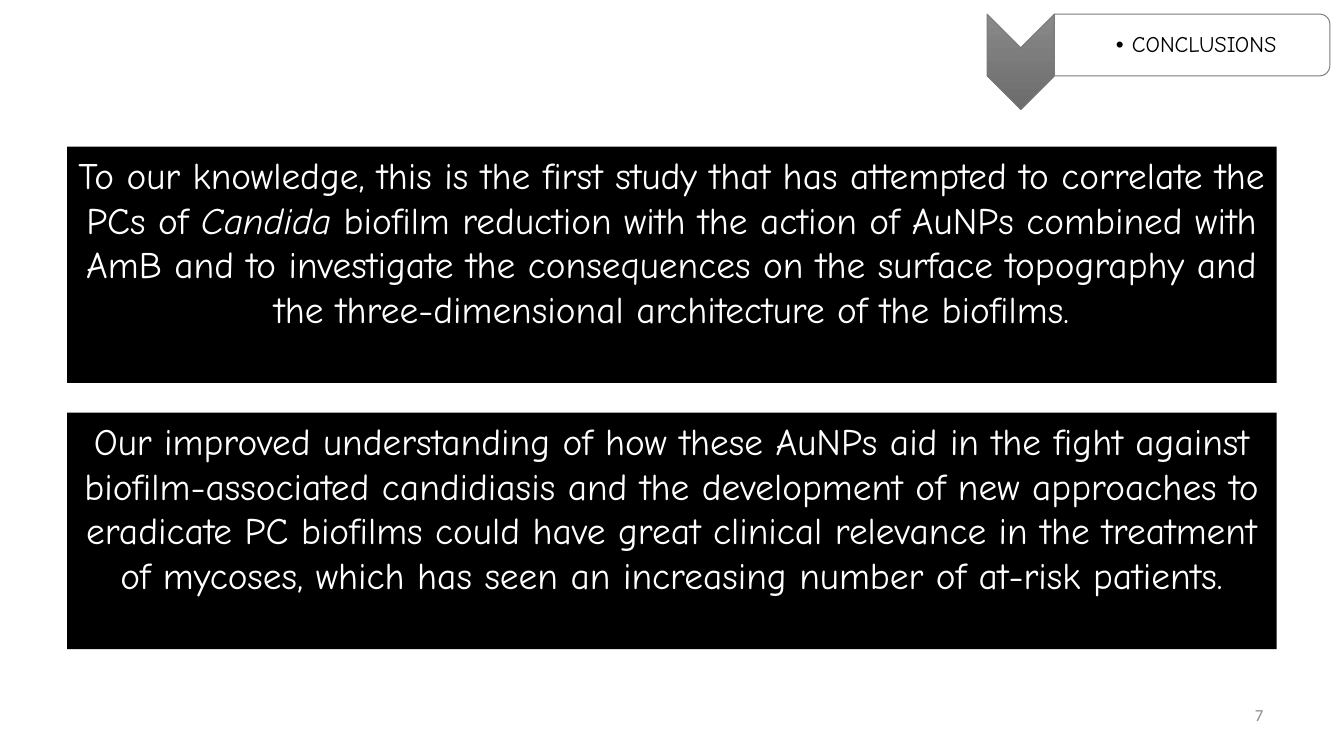
from lxml import etree
from pptx import Presentation
from pptx import util as u
from pptx.dml.color import RGBColor
from pptx.enum import shapes, text
from pptx.oxml.ns import qn


def paint(code):
    return RGBColor.from_string(code)


class Deck:
    font = "Comic Neue"
    edge = "7A7A7A"

    def __init__(self, wide):
        self.prs = Presentation()
        self.prs.slide_width = u.Inches(wide)
        self.prs.slide_height = u.Inches(wide * 9 / 16)
        self.slide = self.prs.slides.add_slide(self.prs.slide_layouts[3])

    def place(self, item, box):
        item.left, item.top, item.width, item.height = map(u.Inches, box)

    def frame(self, item, inset, anchor):
        body = item.text_frame
        body.word_wrap = True
        body.auto_size = text.MSO_AUTO_SIZE.NONE
        body.vertical_anchor = anchor
        pad = [u.Inches(n) for n in inset]
        body.margin_left, body.margin_top, body.margin_right, body.margin_bottom = pad
        return body.paragraphs[0]

    def style(self, run, size, color, font=None):
        run.font.name = font or self.font
        run.font.size = u.Pt(size)
        run.font.color.rgb = paint(color)

    def turned(self, kind, box):
        item = self.slide.shapes.add_shape(kind, *map(u.Inches, box))
        item.rotation = 90
        item.shadow.inherit = False
        item.line.color.rgb = paint(self.edge)
        item.line.width = u.Pt(0.5)
        return item

    def arrow(self, box, colors):
        item = self.turned(shapes.MSO_SHAPE.CHEVRON, box)
        item.fill.gradient()
        item.fill.gradient_angle = 270
        for stop, color in zip(item.fill.gradient_stops, colors):
            stop.color.rgb = paint(color)
        item.element.spPr.find(qn("a:gradFill")).set("rotWithShape", "0")

    def tab(self, box):
        item = self.turned(shapes.MSO_SHAPE.ROUND_2_SAME_RECTANGLE, box)
        item.fill.solid()
        item.fill.fore_color.rgb = paint("FFFFFF")
        tint = item.element.spPr.find(qn("a:solidFill"))[0]
        etree.SubElement(tint, qn("a:alpha")).set("val", "90000")

    def title(self, box, words):
        item = self.slide.shapes.title
        self.place(item, box)
        para = self.frame(item, (0.09, 0.01, 0.01, 0.01), text.MSO_ANCHOR.MIDDLE)
        para.text = words
        para.alignment = text.PP_ALIGN.CENTER
        para.line_spacing = 0.9
        self.style(para.runs[0], 12, "000000")
        props = para._p.get_or_add_pPr()
        props.set("marL", str(u.Inches(0.12)))
        props.set("indent", str(u.Inches(-0.12)))
        etree.SubElement(props, qn("a:buFont")).set("typeface", "Arial")
        etree.SubElement(props, qn("a:buChar")).set("char", "•")
        self.slide.shapes[-1].element.addnext(item.element)

    def panel(self, slot, box, parts):
        item = self.slide.placeholders[slot]
        self.place(item, box)
        item.fill.solid()
        item.fill.fore_color.rgb = paint("000000")
        para = self.frame(item, (0.07, 0.04, 0.07, 0.04), text.MSO_ANCHOR.TOP)
        para.alignment = text.PP_ALIGN.CENTER
        para.space_before = u.Pt(4)
        para.space_after = u.Pt(6)
        props = para._p.get_or_add_pPr()
        props.set("marL", "0")
        props.set("indent", "0")
        etree.SubElement(props, qn("a:buNone"))
        for words, slant in parts:
            run = para.add_run()
            run.text = words
            run.font.italic = slant
            self.style(run, 20, "FFFFFF")

    def number(self, box, words):
        item = self.slide.shapes.add_textbox(*map(u.Inches, box))
        para = self.frame(item, (0.1, 0.05, 0.1, 0.05), text.MSO_ANCHOR.MIDDLE)
        para.text = words
        para.alignment = text.PP_ALIGN.RIGHT
        self.style(para.runs[0], 9, "8C8C8C", "Calibri")


def main():
    deck = Deck(10)
    deck.arrow((7.24, 0.21, 0.71, 0.5), ("898989", "6C6C6C"))
    deck.tab((8.64, -0.69, 0.46, 2.05))
    deck.title((7.85, 0.13, 2.02, 0.42), "CONCLUSIONS")
    panels = [
        [
            ("To our knowledge, this is the first study that has attempted to "
             "correlate the PCs of ", False),
            ("Candida", True),
            (" biofilm reduction with the action of AuNPs combined with AmB and "
             "to investigate the consequences on the surface topography and the "
             "three-dimensional architecture of the biofilms.", False),
        ],
        [
            ("Our improved understanding of how these AuNPs aid in the fight "
             "against biofilm-associated candidiasis and the development of new "
             "approaches to eradicate PC biofilms could have great clinical "
             "relevance in the treatment of mycoses, which has seen an "
             "increasing number of at-risk patients.", False),
        ],
    ]
    for row, parts in enumerate(panels):
        deck.panel(row + 1, (0.5, 1.09 + row * 1.98, 9, 1.76), parts)
    deck.number((7.17, 5.12, 2.33, 0.39), "7")
    deck.prs.save("out.pptx")


if __name__ == "__main__":
    main()
